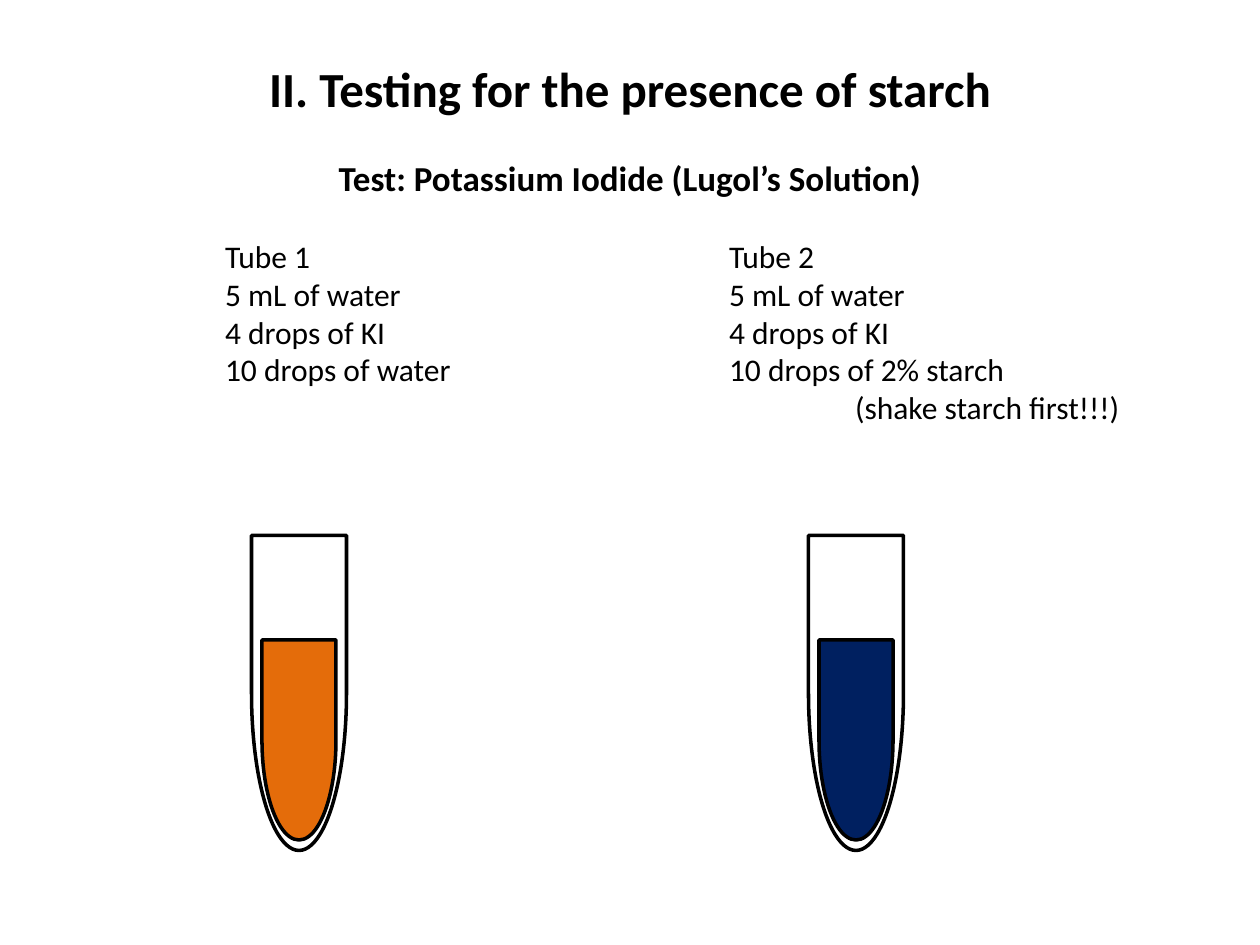
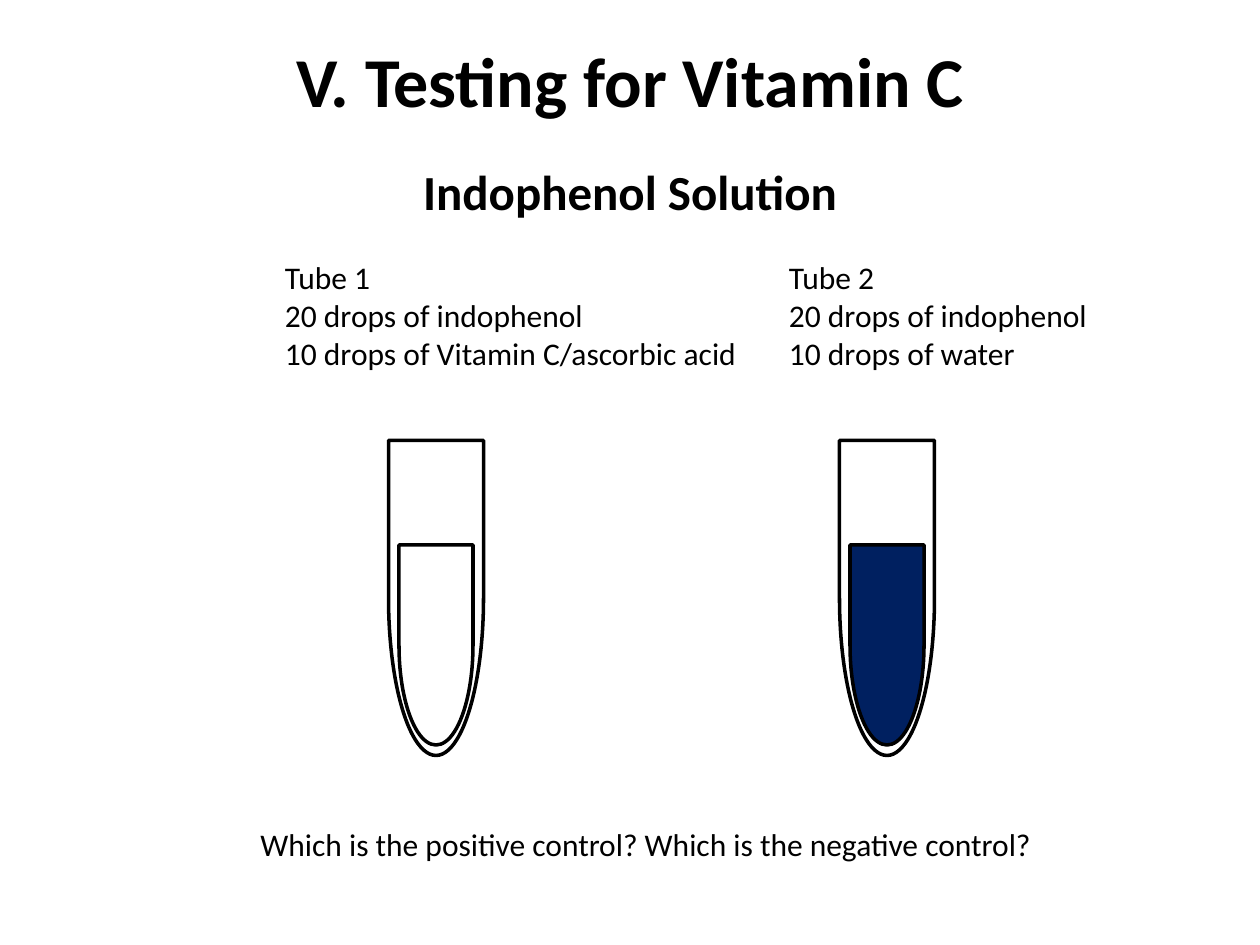
from pptx import Presentation
from pptx.dml.color import RGBColor
from pptx.enum.shapes import MSO_SHAPE
from pptx.enum.text import MSO_ANCHOR, MSO_AUTO_SIZE, PP_ALIGN
from pptx.oxml.xmlchemy import OxmlElement
from pptx.util import Pt

BLACK = RGBColor(0x00, 0x00, 0x00)
WHITE = RGBColor(0xFF, 0xFF, 0xFF)
ORANGE = RGBColor(0xE4, 0x6C, 0x0A)
NAVY = RGBColor(0x00, 0x20, 0x60)

FONT = "Calibri"
BODY_SIZE = 18

# Lengths are px, 126 to the inch.
PX = 914400 / 126
SLIDE_WIDTH, SLIDE_HEIGHT = 1260, 945
COLUMN_STEP, COLUMN_WIDTH = 504, 480
INDENT = 126
TUBE_LENGTH, TUBE_WIDTH = 315, 95
LIQUID_LENGTH, LIQUID_WIDTH = 200, 74
LIQUID_DROP = 47  # liquid centre below tube centre

# Recipe lines are (indent level, text); tubes are (centre x, liquid colour).
EXPERIMENTS = [
    {
        "title": ("II. Testing for the presence of starch", 28, 59),
        "reagent": ("Test: Potassium Iodide (Lugol’s Solution)", 20, 157),
        "recipes_at": (225, 237),
        "recipes": [
            [(0, "Tube 1"), (0, "5 mL of water"), (0, "4 drops of KI"),
             (0, "10 drops of water")],
            [(0, "Tube 2"), (0, "5 mL of water"), (0, "4 drops of KI"),
             (0, "10 drops of 2% starch"), (1, "(shake starch first!!!)")],
        ],
        "tube_middle": 693,
        "tubes": [(299, ORANGE), (856, NAVY)],
        "question": None,
    },
    {
        "title": ("V. Testing for Vitamin C", 40, 38),
        "reagent": ("Indophenol Solution", 28, 161),
        "recipes_at": (285, 258),
        "recipes": [
            [(0, "Tube 1"), (0, "20 drops of indophenol"),
             (0, "10 drops of Vitamin C/ascorbic acid")],
            [(0, "Tube 2"), (0, "20 drops of indophenol"),
             (0, "10 drops of water")],
        ],
        "tube_middle": 598,
        "tubes": [(436, WHITE), (887, NAVY)],
        "question": ("Which is the positive control? Which is the negative control?",
                     (246, 825, 800, 40)),
    },
]


def emu(*lengths):
    return [round(length * PX) for length in lengths]


def place(shape, left, top, width, height):
    shape.left, shape.top, shape.width, shape.height = emu(left, top, width, height)


def write(shape, lines, size, bold=False, align=PP_ALIGN.LEFT):
    """Fill a shape with (indent level, text) lines, unbulleted and without insets."""
    frame = shape.text_frame
    frame.word_wrap = True
    frame.auto_size = MSO_AUTO_SIZE.NONE
    frame.vertical_anchor = MSO_ANCHOR.TOP
    frame.margin_left = frame.margin_right = frame.margin_top = frame.margin_bottom = 0
    for number, (level, text) in enumerate(lines):
        paragraph = frame.add_paragraph() if number else frame.paragraphs[0]
        paragraph.alignment = align
        paragraph.space_before = Pt(0)
        properties = paragraph._p.get_or_add_pPr()
        properties.set("marL", str(emu(level * INDENT)[0]))
        properties.set("indent", "0")
        properties.append(OxmlElement("a:buNone"))
        run = paragraph.add_run()
        run.text = text
        run.font.name = FONT
        run.font.size = Pt(size)
        run.font.bold = bold
        run.font.color.rgb = BLACK


def add_text_box(slide, box, text, size, bold=False):
    text_box = slide.shapes.add_textbox(*emu(*box))
    write(text_box, [(0, text)], size, bold, PP_ALIGN.CENTER)


def add_round_bottom(slide, center, middle, length, width, color=None):
    """Stand a delay shape on its rounded end, centred on the given point."""
    shape = slide.shapes.add_shape(
        MSO_SHAPE.FLOWCHART_DELAY,
        *emu(center - length / 2, middle - width / 2, length, width))
    shape.rotation = 90
    shape.shadow.inherit = False
    shape.line.color.rgb = BLACK
    shape.line.width = Pt(2)
    if color is None:
        shape.fill.background()
    else:
        shape.fill.solid()
        shape.fill.fore_color.rgb = color


def add_experiment(presentation, experiment):
    slide = presentation.slides.add_slide(presentation.slide_layouts.get_by_name("Two Content"))
    title, *columns = slide.placeholders

    text, size, top = experiment["title"]
    place(title, 0, top, SLIDE_WIDTH, 2 * size)
    write(title, [(0, text)], size, True, PP_ALIGN.CENTER)

    text, size, top = experiment["reagent"]
    add_text_box(slide, (0, top, SLIDE_WIDTH, 2 * size), text, size, True)

    left, top = experiment["recipes_at"]
    for number, (column, recipe) in enumerate(zip(columns, experiment["recipes"])):
        place(column, left + number * COLUMN_STEP, top, COLUMN_WIDTH, 38 * len(recipe))
        write(column, recipe, BODY_SIZE)

    middle = experiment["tube_middle"]
    for center, color in experiment["tubes"]:
        add_round_bottom(slide, center, middle, TUBE_LENGTH, TUBE_WIDTH)
        add_round_bottom(slide, center, middle + LIQUID_DROP,
                         LIQUID_LENGTH, LIQUID_WIDTH, color)

    if experiment["question"]:
        text, box = experiment["question"]
        add_text_box(slide, box, text, BODY_SIZE)


def main():
    presentation = Presentation()
    presentation.slide_width, presentation.slide_height = emu(SLIDE_WIDTH, SLIDE_HEIGHT)
    for experiment in EXPERIMENTS:
        add_experiment(presentation, experiment)
    presentation.save("out.pptx")


if __name__ == "__main__":
    main()
